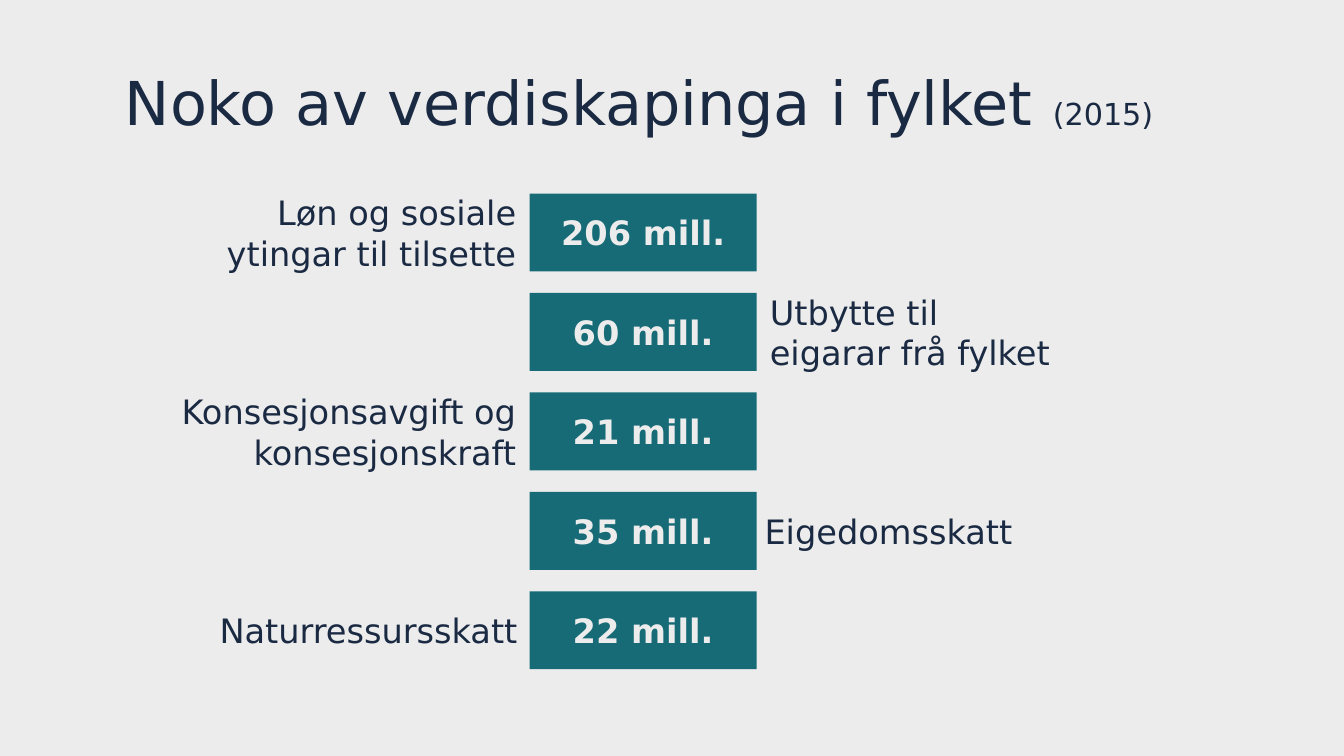
from dataclasses import dataclass

from pptx import Presentation
from pptx.dml.color import RGBColor
from pptx.enum.shapes import MSO_SHAPE
from pptx.enum.text import MSO_ANCHOR, PP_ALIGN
from pptx.util import Inches, Pt

RECTANGLE = MSO_SHAPE.RECTANGLE
MIDDLE = MSO_ANCHOR.MIDDLE
LEFT, CENTER, RIGHT = PP_ALIGN.LEFT, PP_ALIGN.CENTER, PP_ALIGN.RIGHT


@dataclass(frozen=True)
class Theme:
    background: RGBColor = RGBColor.from_string("ECECEC")
    ink: RGBColor = RGBColor.from_string("1B2A43")
    bar: RGBColor = RGBColor.from_string("166B77")
    font: str = "DejaVu Sans"
    title_size: float = 32.4
    year_size: float = 16.2
    body_size: float = 18


THEME = Theme()

# amount, label, label side, label width, overlap of the label with the bar
ROWS = [
    ("206 mill.", "Løn og sosiale ytingar til tilsette", LEFT, 2.92, 0),
    ("60 mill.", "Utbytte til \veigarar frå fylket", RIGHT, 2.67, 0),
    ("21 mill.", "Konsesjonsavgift og konsesjonskraft", LEFT, 3.01, 0),
    ("35 mill.", "Eigedomsskatt", RIGHT, 2.35, 0.04),
    ("22 mill.", "Naturressursskatt", LEFT, 2.64, 0.01),
]


def style_run(run, size, color, bold=False):
    font_format = {"name": THEME.font, "size": Pt(size), "bold": bold}
    for attribute, value in font_format.items():
        setattr(run.font, attribute, value)
    run.font.color.rgb = color


def prepare_frame(shape, alignment):
    """Set wrapping and anchor, and return the first paragraph."""
    frame = shape.text_frame
    frame.word_wrap = True
    frame.vertical_anchor = MIDDLE
    paragraph = frame.paragraphs[0]
    paragraph.alignment = alignment
    return paragraph


def fill_text(shape, text, alignment, color, bold=False):
    paragraph = prepare_frame(shape, alignment)
    paragraph.text = text
    for run in paragraph.runs:
        style_run(run, THEME.body_size, color, bold)


def add_title(slide, left, top, width, height):
    box = slide.shapes.add_textbox(*map(Inches, (left, top, width, height)))
    paragraph = prepare_frame(box, LEFT)
    parts = [
        ("Noko av verdiskapinga i fylket ", THEME.title_size),
        ("(2015)", THEME.year_size),
    ]
    for text, size in parts:
        run = paragraph.add_run()
        run.text = text
        style_run(run, size, THEME.ink)


def add_amount_bar(slide, text, left, top, width, height):
    bar = slide.shapes.add_shape(
        RECTANGLE, *map(Inches, (left, top, width, height)))
    bar.shadow.inherit = False
    bar.fill.solid()
    bar.fill.fore_color.rgb = THEME.bar
    bar.line.fill.background()
    fill_text(bar, text, CENTER, THEME.background, bold=True)


def add_amounts(slide, left, top, width, height, bar_height=0.58):
    """Stack the bars evenly in the box, with labels beside them."""
    pitch = (height - bar_height) / (len(ROWS) - 1)
    for index, (amount, label, side, label_width, overlap) in enumerate(ROWS):
        row_top = top + index * pitch
        add_amount_bar(slide, amount, left, row_top, width, bar_height)
        if side == LEFT:
            label_left, alignment = left - label_width + overlap, RIGHT
        else:
            label_left, alignment = left + width - overlap, LEFT
        box = slide.shapes.add_textbox(
            *map(Inches, (label_left, row_top, label_width, bar_height)))
        fill_text(box, label, alignment, THEME.ink)


def main():
    presentation = Presentation()
    presentation.slide_width = Inches(10)
    presentation.slide_height = presentation.slide_width * 9 // 16
    slide = presentation.slides.add_slide(presentation.slide_layouts[6])
    slide.background.fill.solid()
    slide.background.fill.fore_color.rgb = THEME.background
    add_title(slide, 0.83, 0.34, 7.88, 0.83)
    add_amounts(slide, 3.94, 1.44, 1.69, 3.54)
    presentation.save("out.pptx")


if __name__ == "__main__":
    main()
